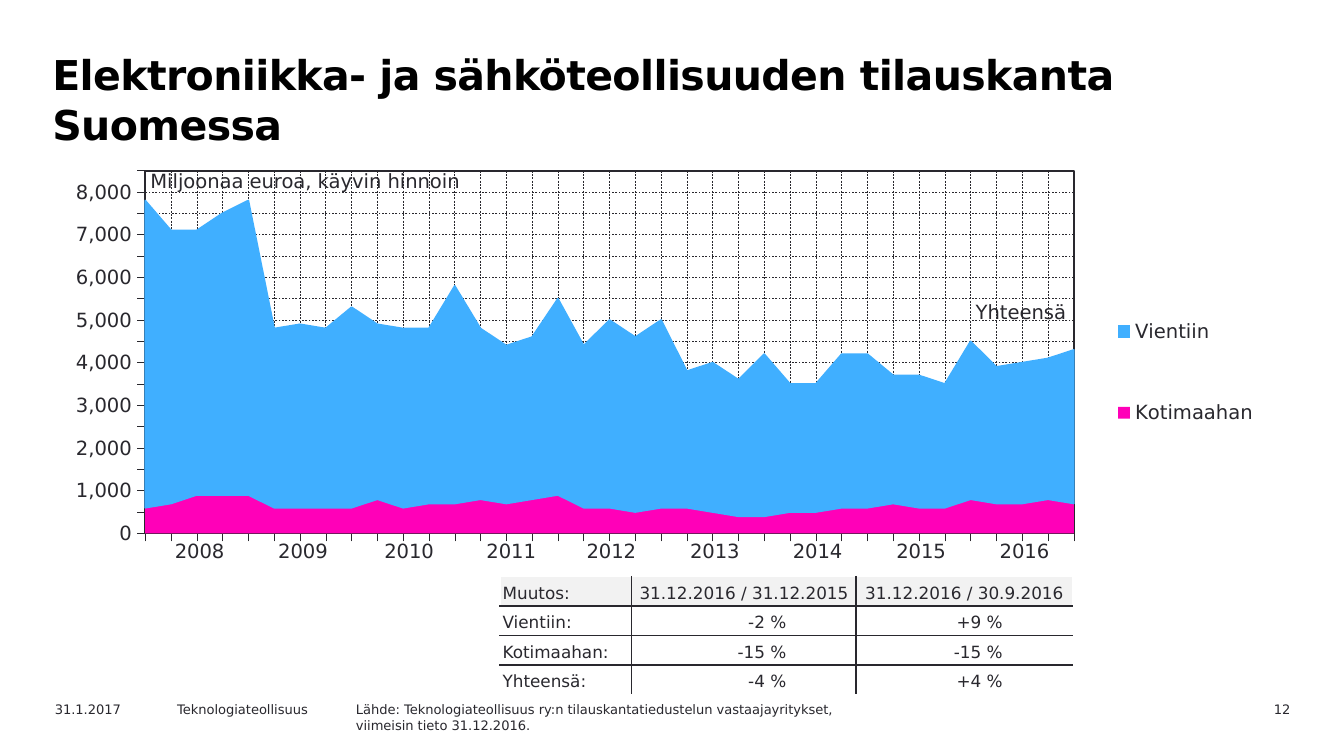
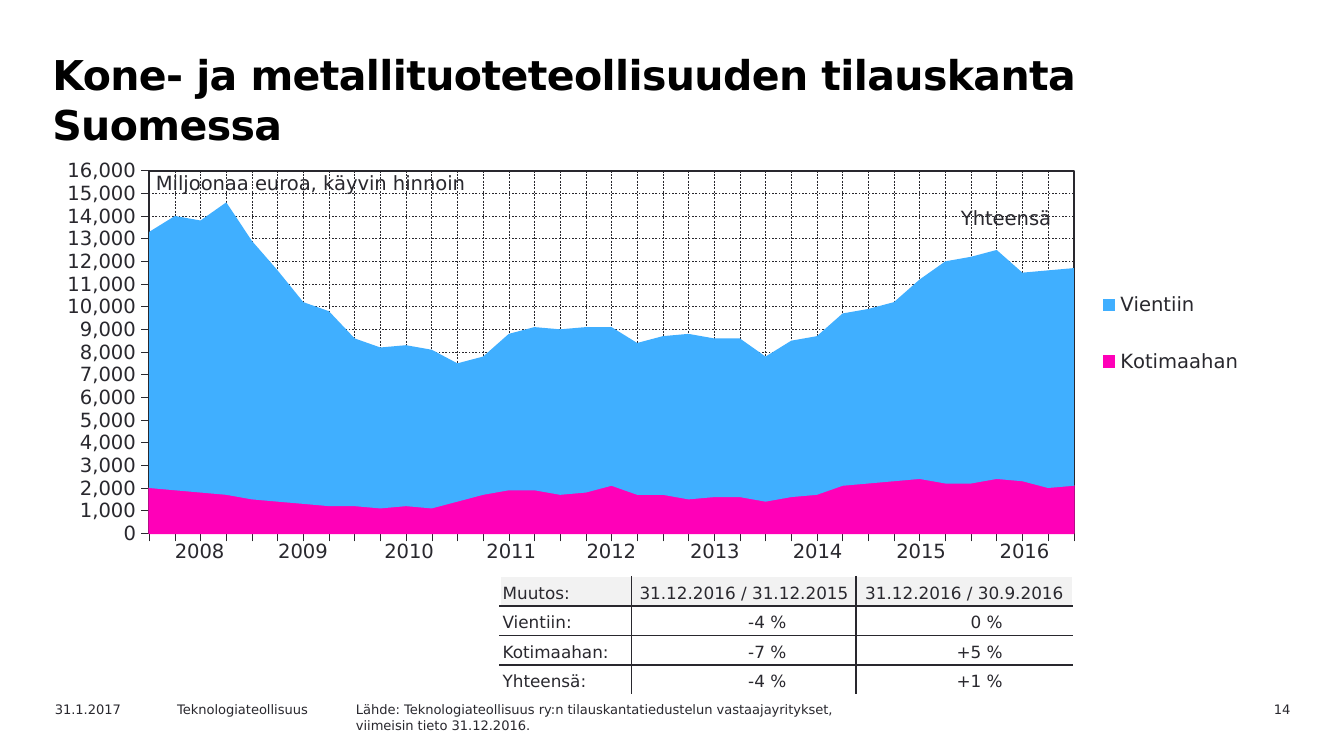
from dataclasses import dataclass

from lxml import etree
from pptx import Presentation, oxml, util as u
from pptx.chart import data as chart_data
from pptx.dml import color
from pptx.enum import chart as charts, dml, text
from pptx.oxml import ns

COLORS = {
    "ink": "29282E",
    "title": "000000",
    "header": "F2F2F2",
    "white": "FFFFFF",
    "domestic": "FF00B8",
    "export": "40AFFF",
}
FONT = "DejaVu Sans"
LABEL_SIZE = 10.5
TABLE_SIZE = 9
FOOTER_SIZE = 7
NO_STYLE = "{2D5ABB26-0587-4C30-8999-92F81FD0307C}"
LEFT, CENTER, RIGHT = text.PP_ALIGN.LEFT, text.PP_ALIGN.CENTER, text.PP_ALIGN.RIGHT
QUARTER_COUNT = 34
YEAR_WIDTHS = [0.77, 0.77, 0.81, 0.71, 0.78, 0.76, 0.77, 0.77, 0.77]
CHANGE_WIDTHS = [0.98, 1.67, 1.61]
CHANGE_HEADER = ("Muutos:", "31.12.2016 / 31.12.2015", "31.12.2016 / 30.9.2016")
CHANGE_LABELS = ("Vientiin:", "Kotimaahan:", "Yhteensä:")


@dataclass(frozen=True)
class Box:
    left: float
    top: float
    width: float
    height: float

    def lengths(self) -> tuple:
        return tuple(u.Inches(v) for v in (self.left, self.top, self.width, self.height))


@dataclass(frozen=True)
class Label:
    words: str
    box: Box
    size: float = LABEL_SIZE
    align: int = LEFT
    insets: tuple = (0.1, 0.05, 0.1, 0.05)
    wrap: bool = True


@dataclass(frozen=True)
class OrderBook:
    title: str
    number: str
    chart_box: Box
    plot_box: Box
    legend_box: Box
    maximum: int
    step: int
    domestic: list
    export: list
    outlined: str
    unit_box: Box
    total_box: Box
    changes: tuple


ORDER_BOOKS = [
    OrderBook(
        title="Elektroniikka- ja sähköteollisuuden tilauskanta Suomessa",
        number="12",
        chart_box=Box(0.39, 1.18, 9.2, 3.05),
        plot_box=Box(0.69, 0.09, 6.91, 2.7),
        legend_box=Box(7.88, 0.77, 1.15, 1.64),
        maximum=8500,
        step=500,
        domestic=[600, 700, 900, 900, 900, 600, 600, 600, 600, 800, 600, 700, 700,
                  800, 700, 800, 900, 600, 600, 500, 600, 600, 500, 400, 400, 500,
                  500, 600, 600, 700, 600, 600, 800, 700, 700, 800, 700],
        export=[7200, 6400, 6200, 6600, 6900, 4200, 4300, 4200, 4700, 4100, 4200, 4100,
                5100, 4000, 3700, 3800, 4600, 3800, 4400, 4100, 4400, 3200, 3500, 3200,
                3800, 3000, 3000, 3600, 3600, 3000, 3100, 2900, 3700, 3200, 3300, 3300,
                3600],
        outlined="export",
        unit_box=Box(1.03, 1.21, 2.6, 0.27),
        total_box=Box(7.17, 2.19, 1.06, 0.27),
        changes=(("-2 %", "+9 %"), ("-15 %", "-15 %"), ("-4 %", "+4 %")),
    ),
    OrderBook(
        title="Kone- ja metallituoteteollisuuden tilauskanta Suomessa",
        number="14",
        chart_box=Box(0.42, 1.18, 9.18, 3.05),
        plot_box=Box(0.69, 0.09, 6.88, 2.7),
        legend_box=Box(7.74, 0.75, 1.15, 1.1),
        maximum=16000,
        step=1000,
        domestic=[2000, 1900, 1800, 1700, 1500, 1400, 1300, 1200, 1200, 1100, 1200, 1100,
                  1400, 1700, 1900, 1900, 1700, 1800, 2100, 1700, 1700, 1500, 1600, 1600,
                  1400, 1600, 1700, 2100, 2200, 2300, 2400, 2200, 2200, 2400, 2300, 2000,
                  2100],
        export=[11300, 12100, 12000, 12900, 11400, 10200, 8900, 8600, 7400, 7100, 7100,
                7000, 6100, 6100, 6900, 7200, 7300, 7300, 7000, 6700, 7000, 7300, 7000,
                7000, 6400, 6900, 7000, 7600, 7700, 7900, 8800, 9800, 10000, 10100, 9200,
                9600, 9600],
        outlined="domestic",
        unit_box=Box(1.07, 1.22, 2.6, 0.27),
        total_box=Box(7.06, 1.49, 1.06, 0.27),
        changes=(("-4 %", "0 %"), ("-7 %", "+5 %"), ("-4 %", "+1 %")),
    ),
]

FOOTERS = [
    Label("31.1.2017", Box(0.31, 5.17, 1, 0.18), FOOTER_SIZE),
    Label("Teknologiateollisuus", Box(1.22, 5.17, 1.42, 0.18), FOOTER_SIZE),
    Label("Lähde: Teknologiateollisuus ry:n tilauskantatiedustelun vastaajayritykset,\n"
          "viimeisin tieto 31.12.2016.", Box(2.55, 5.17, 5, 0.26), FOOTER_SIZE),
]


def rgb(name: str) -> color.RGBColor:
    return color.RGBColor.from_string(COLORS[name])


def style_font(font, size: float, ink: str = "ink", bold: bool = False) -> None:
    font.name = FONT
    font.size = u.Pt(size)
    font.bold = bold
    font.color.rgb = rgb(ink)


def set_insets(holder, insets: tuple) -> None:
    (holder.margin_left, holder.margin_top,
     holder.margin_right, holder.margin_bottom) = (u.Inches(v) for v in insets)


def add_label(slide, label: Label):
    frame = slide.shapes.add_textbox(*label.box.lengths()).text_frame
    frame.word_wrap = label.wrap
    set_insets(frame, label.insets)
    frame.text = label.words
    for paragraph in frame.paragraphs:
        paragraph.alignment = label.align
        for run in paragraph.runs:
            style_font(run.font, label.size)
    return frame


def add_title(slide, title: str) -> None:
    frame = add_label(slide, Label(title, Box(0.28, 0.31, 8.74, 0.71), 22,
                                   insets=(0.11, 0.05, 0.1, 0.05)))
    heading = frame.paragraphs[0]
    heading.line_spacing = u.Pt(27)
    run = heading.runs[0]
    style_font(run.font, 22, "title", bold=True)
    run._r.get_or_add_rPr().set("spc", "-30")


def place_part(part, index: int, box: Box, whole: Box, inner: bool = False) -> None:
    previous = part.find(ns.qn("c:layout"))
    if previous is not None:
        part.remove(previous)
    layout = etree.Element(ns.qn("c:layout"))
    manual = etree.SubElement(layout, ns.qn("c:manualLayout"))
    settings = [("layoutTarget", "inner")] if inner else []
    settings += [("xMode", "edge"), ("yMode", "edge"),
                 ("x", box.left / whole.width), ("y", box.top / whole.height),
                 ("w", box.width / whole.width), ("h", box.height / whole.height)]
    for tag, value in settings:
        etree.SubElement(manual, ns.qn(f"c:{tag}")).set("val", str(value))
    part.insert(index, layout)


def frame_plot(plot_area) -> None:
    plot_area.append(oxml.parse_xml(
        f'<c:spPr {ns.nsdecls("c", "a")}><a:noFill/><a:ln w="11176"><a:solidFill>'
        f'<a:srgbClr val="{COLORS["ink"]}"/></a:solidFill></a:ln></c:spPr>'))


def style_axis(axis) -> None:
    axis.major_tick_mark = charts.XL_TICK_MARK.OUTSIDE
    axis.minor_tick_mark = charts.XL_TICK_MARK.NONE
    axis.has_major_gridlines = True
    grid = axis.major_gridlines.format.line
    for line, width in ((axis.format.line, 0.22), (grid, 0.25)):
        line.color.rgb = rgb("ink")
        line.width = u.Pt(width)
    grid.dash_style = dml.MSO_LINE.DASH


def add_order_chart(slide, book: OrderBook) -> None:
    orders = chart_data.CategoryChartData(number_format="#,##0")
    orders.categories = [str(n + 1) for n in range(QUARTER_COUNT)]
    orders.add_series("Kotimaahan ", book.domestic)
    orders.add_series("Vientiin ", book.export)
    chart = slide.shapes.add_chart(charts.XL_CHART_TYPE.AREA_STACKED,
                                   *book.chart_box.lengths(), orders).chart
    chart.has_title = False
    style_font(chart.font, LABEL_SIZE)
    chart.plots[0].vary_by_categories = False
    for series, key in zip(chart.plots[0].series, ("domestic", "export")):
        series.format.fill.solid()
        series.format.fill.fore_color.rgb = rgb(key)
        if key == book.outlined:
            series.format.line.color.rgb = rgb(key)
            series.format.line.width = u.Pt(0.88)
        else:
            series.format.line.fill.background()

    quarters, millions = chart.category_axis, chart.value_axis
    style_axis(quarters)
    style_axis(millions)
    quarters.tick_label_position = charts.XL_TICK_LABEL_POSITION.NONE
    millions.minimum_scale = 0
    millions.maximum_scale = book.maximum
    millions.major_unit = book.step
    millions.tick_labels.number_format = "#,##0"
    millions.tick_labels.number_format_is_linked = False
    style_font(millions.tick_labels.font, LABEL_SIZE)

    chart.has_legend = True
    chart.legend.position = charts.XL_LEGEND_POSITION.RIGHT
    chart.legend.include_in_layout = False
    style_font(chart.legend.font, LABEL_SIZE)
    place_part(chart.legend._element, 1, book.legend_box, book.chart_box)

    plot_area = chart._chartSpace.chart.plotArea
    for crossing in plot_area.iter(ns.qn("c:crossBetween")):
        crossing.set("val", "midCat")
    place_part(plot_area, 0, book.plot_box, book.chart_box, inner=True)
    frame_plot(plot_area)


def add_plain_table(slide, rows: int, widths: list, left: float, top: float,
                    row_height: float):
    box = Box(left, top, sum(widths), rows * row_height)
    table = slide.shapes.add_table(rows, len(widths), *box.lengths()).table
    table.first_row = False
    table.horz_banding = False
    table._tbl.tblPr.find(ns.qn("a:tableStyleId")).text = NO_STYLE
    for column, width in zip(table.columns, widths):
        column.width = u.Inches(width)
    for row in table.rows:
        row.height = u.Inches(row_height)
    return table


def fill_cell(cell, words: str, size: float, align: int, insets: tuple) -> None:
    cell.text = words
    set_insets(cell, insets)
    paragraph = cell.text_frame.paragraphs[0]
    paragraph.alignment = align
    style_font(paragraph.runs[0].font, size)


def set_borders(cell, sides: dict) -> None:
    properties = cell._tc.get_or_add_tcPr()
    for side, name in sides.items():
        properties.append(oxml.parse_xml(
            f'<a:ln{side} {ns.nsdecls("a")} w="12700"><a:solidFill>'
            f'<a:srgbClr val="{COLORS[name]}"/></a:solidFill></a:ln{side}>'))


def add_change_table(slide, changes: tuple) -> None:
    grid = [CHANGE_HEADER]
    grid += [(label, *values) for label, values in zip(CHANGE_LABELS, changes)]
    last_row, last_column = len(grid) - 1, len(CHANGE_WIDTHS) - 1
    table = add_plain_table(slide, len(grid), CHANGE_WIDTHS, 3.72, 4.29, 0.22)
    for r, row in enumerate(grid):
        for c, words in enumerate(row):
            cell = table.cell(r, c)
            is_value = r > 0 and c > 0
            align = LEFT if c == 0 else RIGHT if is_value else CENTER
            fill_cell(cell, words, TABLE_SIZE, align,
                      (0.02, 0.02, 0.52 if is_value else 0.02, 0.02))
            cell.vertical_anchor = text.MSO_ANCHOR.BOTTOM
            outer = {"L": c == 0, "R": c == last_column, "T": r == 0, "B": r == last_row}
            set_borders(cell, {s: "white" if edge else "ink" for s, edge in outer.items()})
            if r in (0, last_row):
                cell.fill.solid()
                cell.fill.fore_color.rgb = rgb("white" if r else "header")
            else:
                cell.fill.background()


def add_year_row(slide) -> None:
    table = add_plain_table(slide, 1, YEAR_WIDTHS, 1.1, 3.97, 0.32)
    for c in range(len(YEAR_WIDTHS)):
        cell = table.cell(0, c)
        fill_cell(cell, str(2008 + c), LABEL_SIZE, CENTER, (0.1, 0.05, 0.1, 0.05))
        cell.fill.background()


def add_order_slide(deck, book: OrderBook) -> None:
    slide = deck.slides.add_slide(deck.slide_layouts[6])
    add_title(slide, book.title)
    number = Label(book.number, Box(8.76, 5.17, 0.94, 0.18), FOOTER_SIZE, RIGHT)
    for label in (number, *FOOTERS):
        add_label(slide, label)
    add_order_chart(slide, book)
    add_label(slide, Label("Miljoonaa euroa, käyvin hinnoin", book.unit_box,
                           insets=(0.09, 0.05, 0.09, 0.05), wrap=False))
    add_change_table(slide, book.changes)
    add_label(slide, Label("Yhteensä", book.total_box, insets=(0.09, 0.04, 0.09, 0.04)))
    add_year_row(slide)


def main() -> None:
    deck = Presentation()
    deck.slide_width = u.Inches(10)
    deck.slide_height = deck.slide_width * 9 // 16
    for book in ORDER_BOOKS:
        add_order_slide(deck, book)
    deck.save("out.pptx")


if __name__ == "__main__":
    main()
